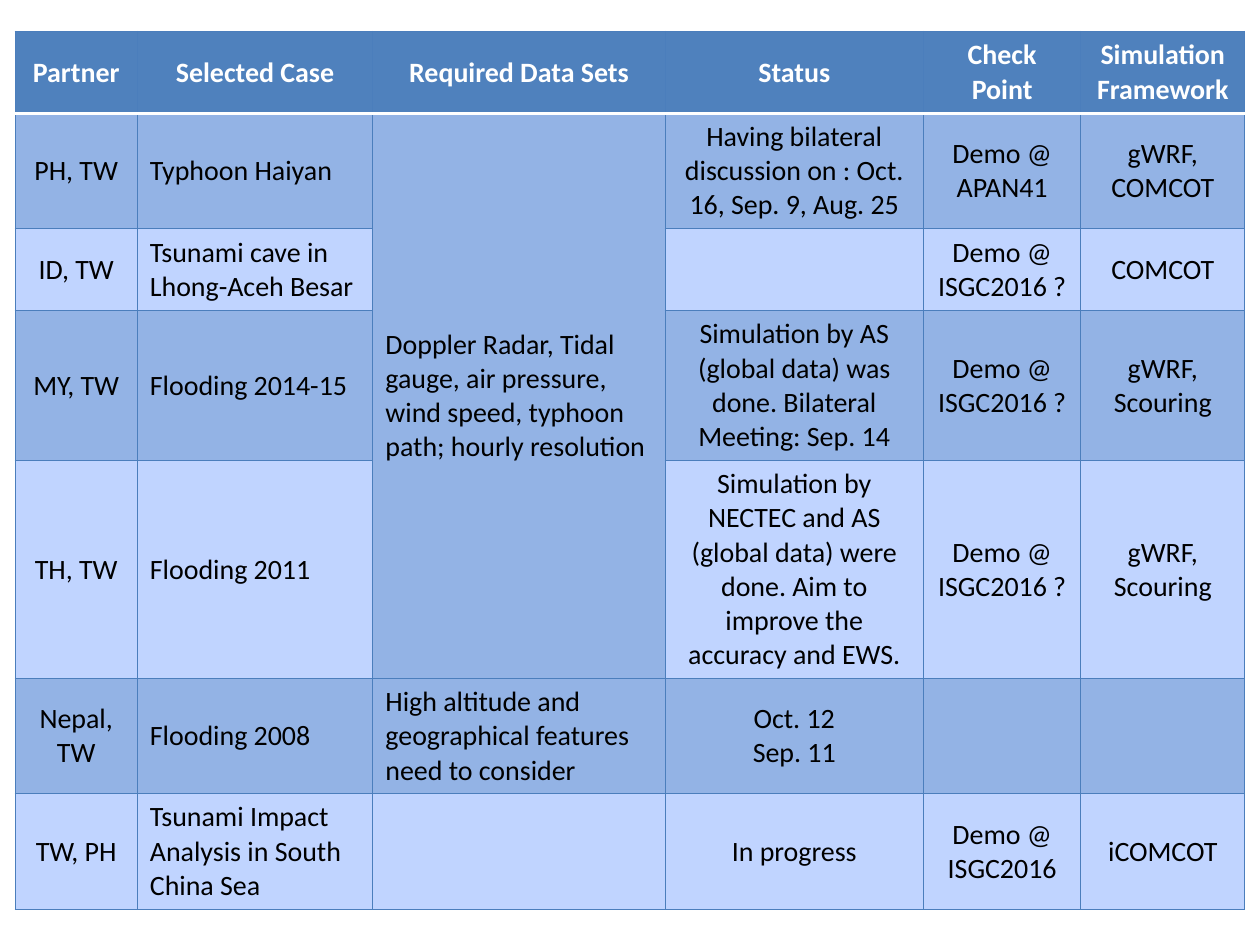
from lxml.etree import SubElement
from pptx import Presentation
from pptx.dml.color import RGBColor
from pptx.enum.text import MSO_ANCHOR as Anchor, PP_ALIGN as Align
from pptx.oxml.ns import qn
from pptx.util import Inches, Pt

HEADER_FILL = "4F81BD"
BAND_FILLS = ("C0D4FF", "93B3E5")  # even rows, odd rows
GRID = ("4B7EBC", 0.75)
HEADER_RULE = ("FFFFFF", 2)

COLUMN_WIDTHS = (0.97, 1.87, 2.32, 2.05, 1.25, 1.3)
ROW_HEIGHTS = (0.65, 0.91, 0.65, 1.19, 1.73, 0.91, 0.91)
LEFT_ALIGNED = (1, 2)  # case and data set columns
SHARED_DATA_ROWS = (1, 4)  # first and last row that share one data set

CASES = (
    ("Partner", "Selected Case", "Required Data Sets", "Status",
     "Check Point", "Simulation Framework"),
    ("PH, TW", "Typhoon Haiyan",
     "Doppler Radar, Tidal gauge, air pressure, wind speed, typhoon path; "
     "hourly resolution",
     "Having bilateral discussion on : Oct. 16, Sep. 9, Aug. 25",
     "Demo @ APAN41", "gWRF, COMCOT"),
    ("ID, TW", "Tsunami cave in Lhong-Aceh Besar", "", "",
     "Demo @ ISGC2016 ?", "COMCOT"),
    ("MY, TW", "Flooding 2014-15", "",
     "Simulation by AS (global data) was done. Bilateral Meeting: Sep. 14",
     "Demo @ ISGC2016 ?", "gWRF, Scouring"),
    ("TH, TW", "Flooding 2011", "",
     "Simulation by NECTEC and AS (global data) were done. Aim to improve "
     "the accuracy and EWS.",
     "Demo @ ISGC2016 ?", "gWRF, Scouring"),
    ("Nepal, TW", "Flooding 2008",
     "High altitude and geographical features need to consider",
     "Oct. 12\nSep. 11", "", ""),
    ("TW, PH", "Tsunami Impact Analysis in South China Sea", "",
     "In progress", "Demo @ ISGC2016", "iCOMCOT"),
)


def color(hex_code):
    return RGBColor.from_string(hex_code)


def write_text(cell, text, size=16, fill="000000", bold=False,
               align=Align.CENTER):
    cell.vertical_anchor = Anchor.MIDDLE
    cell.text = text
    for paragraph in cell.text_frame.paragraphs:
        paragraph.alignment = align
        font = paragraph.font
        font.name, font.size, font.bold = "Calibri", Pt(size), bold
        font.color.rgb = color(fill)
        for run in paragraph.runs:
            run.font.name, run.font.size, run.font.bold = "Calibri", Pt(size), bold
            run.font.color.rgb = color(fill)


def draw_borders(cell, top=GRID, bottom=GRID):
    properties = cell._tc.get_or_add_tcPr()
    edges = (("a:lnL", GRID), ("a:lnR", GRID), ("a:lnT", top), ("a:lnB", bottom))
    for tag, (hex_code, width) in edges:
        line = SubElement(properties, qn(tag), w=str(Pt(width)))
        solid = SubElement(line, qn("a:solidFill"))
        SubElement(solid, qn("a:srgbClr"), val=hex_code)


def style_cell(cell, row):
    # The white rule lies between the header and the first case
    draw_borders(cell,
                 top=HEADER_RULE if row == 1 else GRID,
                 bottom=HEADER_RULE if row == 0 else GRID)
    cell.fill.solid()
    cell.fill.fore_color.rgb = color(BAND_FILLS[row % 2] if row else HEADER_FILL)


def add_case_table(slide):
    table = slide.shapes.add_table(
        len(ROW_HEIGHTS), len(COLUMN_WIDTHS), Inches(0.12), Inches(0.25),
        Inches(sum(COLUMN_WIDTHS)), Inches(sum(ROW_HEIGHTS))).table
    for column, width in zip(table.columns, COLUMN_WIDTHS):
        column.width = Inches(width)
    for table_row, height in zip(table.rows, ROW_HEIGHTS):
        table_row.height = Inches(height)

    # One data set serves the first four cases
    first, last = SHARED_DATA_ROWS
    table.cell(first, 2).merge(table.cell(last, 2))

    for row, case in enumerate(CASES):
        for column, text in enumerate(case):
            cell = table.cell(row, column)
            style_cell(cell, row)
            if row == 0:
                write_text(cell, text, fill="FFFFFF", bold=True)
            else:
                write_text(cell, text, align=Align.LEFT
                           if column in LEFT_ALIGNED else Align.CENTER)


def main():
    deck = Presentation()
    deck.slide_width, deck.slide_height = Inches(10), Inches(7.5)
    slide = deck.slides.add_slide(deck.slide_layouts[6])  # no title here
    add_case_table(slide)
    deck.save("out.pptx")


if __name__ == "__main__":
    main()
